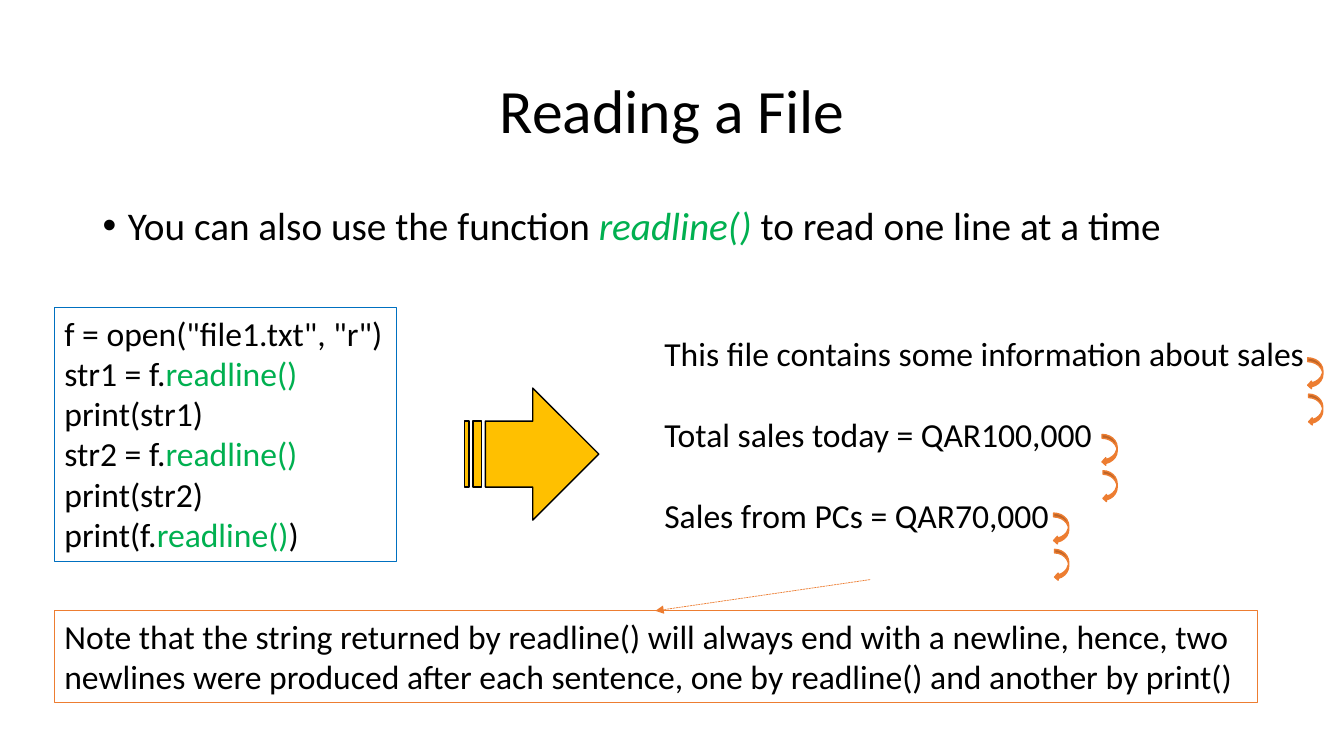
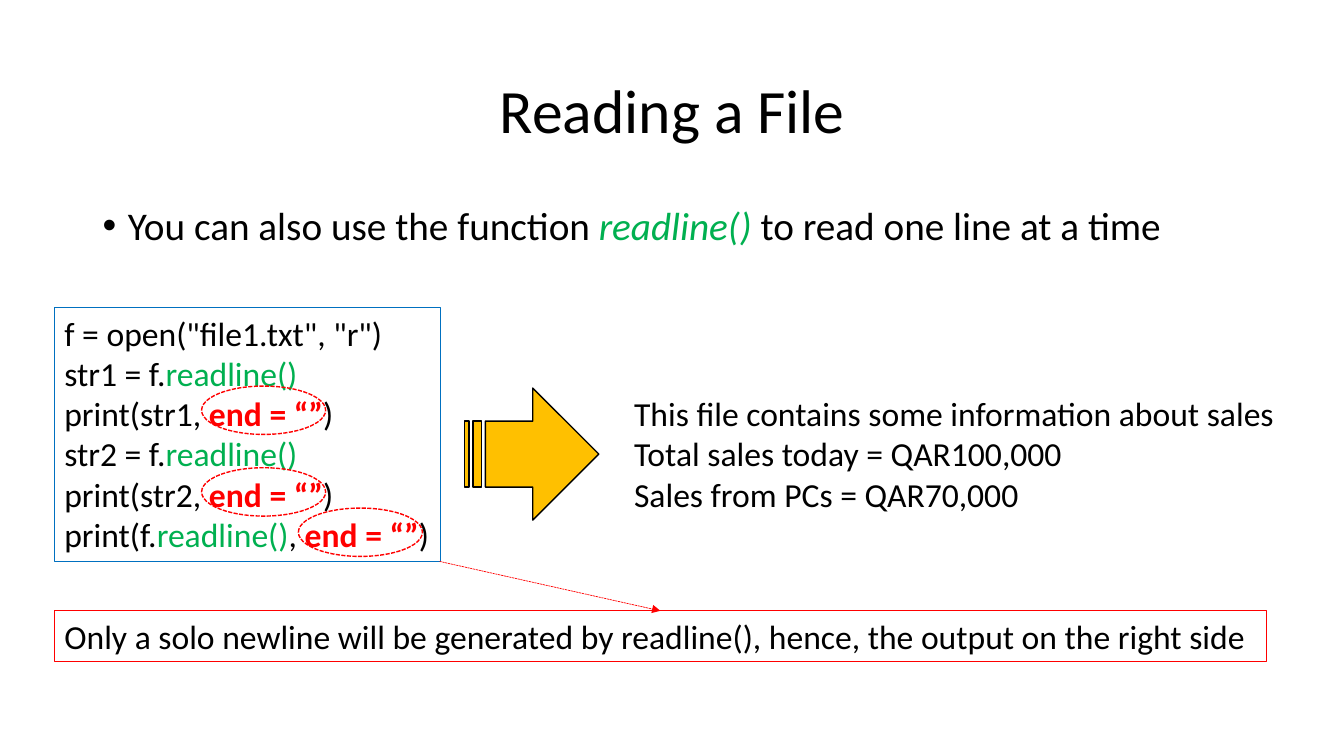
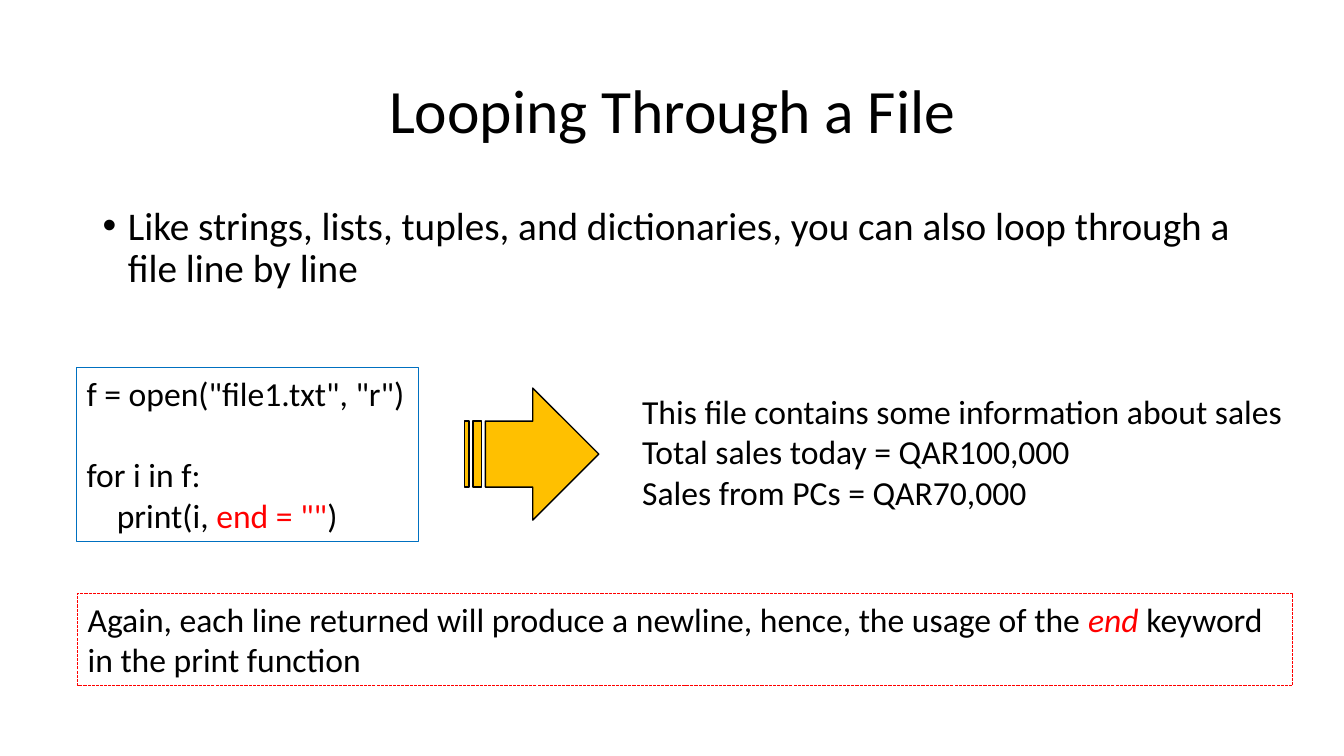
"""Build three slides on reading a file line by line."""
from lxml import etree
from pptx import Presentation
from pptx import util as u
from pptx.dml.color import RGBColor
from pptx.enum import dml, shapes, text
from pptx.oxml import ns

BLACK, GREEN, RED = "000000", "00B050", "FF0000"
BLUE, GOLD, ORANGE = "0070C0", "FFC000", "ED7D31"
DASH = dml.MSO_LINE.SQUARE_DOT
KIND = shapes.MSO_SHAPE
LINE = 29.3


def tint(fill, hue):
    """Make a fill solid in a hex colour."""
    fill.solid()
    fill.fore_color.rgb = RGBColor.from_string(hue)


def write(slide, lines, at, size=24, wrap=True, center=False, space=None,
          bullet=False, gaps=None, dents=None, edge=None, dash=None):
    """Add a text box; each line is a list of strings or (string, colour, style)."""
    box = slide.shapes.add_textbox(*map(u.Inches, at))
    frame = box.text_frame
    frame.word_wrap = wrap
    if edge:
        tint(box.line.fill, edge)
        box.line.width = u.Pt(0.75)
        box.line.dash_style = dash
    if center:
        frame.vertical_anchor = text.MSO_ANCHOR.MIDDLE
    for row, parts in enumerate(lines):
        para = frame.paragraphs[0] if row == 0 else frame.add_paragraph()
        para.alignment = text.PP_ALIGN.CENTER if center else text.PP_ALIGN.LEFT
        para.line_spacing = space
        para.space_before = u.Pt((gaps or {}).get(row, 0))
        props = para._p.get_or_add_pPr()
        if bullet:
            props.set("marL", str(u.Inches(0.25)))
            props.set("indent", str(u.Inches(-0.25)))
            etree.SubElement(props, ns.qn("a:buFont")).set("typeface", "Arial")
            etree.SubElement(props, ns.qn("a:buChar")).set("char", "•")
        elif dents and row in dents:
            props.set("marL", str(u.Inches(dents[row])))
        for part in parts:
            words, hue, style = (part, BLACK, "") if isinstance(part, str) else part
            run = para.add_run()
            run.text = words
            run.font.name = "Calibri"
            run.font.size = u.Pt(size)
            run.font.bold = style == "bold"
            run.font.italic = style == "italic"
            tint(run.font.fill, hue)


call = ("readline()", GREEN, "")
end = ("end = “”", RED, "bold")
start = ['f = open("file1.txt", "r")']
intro = ["You can also use the function ", ("readline() ", GREEN, "italic"),
         "to read one line at a time"]
sales = [["This file contains some information about sales"],
         ["Total sales today = QAR100,000"],
         ["Sales from PCs = QAR70,000"]]

curls = [(KIND.CURVED_LEFT_ARROW, (x + 0.01 * n, y + 0.36 * n, 0.15 - 0.01 * n, 0.31),
          ORANGE, ORANGE, None)
         for x, y in ((10.93, 4.31), (12.97, 3.55), (10.45, 5.09)) for n in (0, 1)]
rings = [(KIND.OVAL, (x, y, 1.23, 0.48), None, RED, DASH)
         for x, y in ((2, 3.83), (2, 4.64), (2.96, 5.04))]
arrow = (KIND.STRIPED_RIGHT_ARROW, (4.61, 3.85, 1.33, 1.31), GOLD, BLACK, None)

pages = [
    dict(title="Reading a File", point=intro,
         code=[start, ["str1 = f.", call], ["print(str1)"], ["str2 = f.", call],
               ["print(str2)"], ["print(f.", call, ")"]],
         place=(0.54, 3.05, 3.39, 2.52), form={},
         out=(6.49, 3.25, 6.61, 2.52), gaps={1: LINE, 2: LINE},
         note=["Note that the string returned by readline() will always end with a "
               "newline, hence, two newlines were produced after each sentence, "
               "one by readline() and another by print()"],
         foot=(0.54, 6.06, 11.93, 0.91), edge=ORANGE, dash=None,
         link=(8.63, 5.75, 6.5, 6.06), marks=curls),
    dict(title="Reading a File", point=intro,
         code=[start, ["str1 = f.", call], ["print(str1, ", end, ")"],
               ["str2 = f.", call], ["print(str2, ", end, ")"],
               ["print(f.", call, ", ", end, ")"]],
         place=(0.54, 3.05, 3.83, 2.52), form={},
         out=(6.19, 3.85, 6.61, 1.31), gaps={},
         note=["Only a solo newline will be generated by readline(), hence, "
               "the output on the right side"],
         foot=(0.54, 6.06, 12.02, 0.5), edge=RED, dash=None,
         link=(4.36, 5.57, 6.55, 6.06), marks=rings),
    dict(title="Looping Through a File",
         point=["Like strings, lists, tuples, and dictionaries, you can also loop "
                "through a file line by line"],
         code=[start, ["for i in f:"], ["print(i, ", ('end = ""', RED, ""), ")"]],
         place=(0.76, 3.65, 3.39, 1.72), form=dict(gaps={1: LINE}, dents={2: 0.3}),
         out=(6.27, 3.83, 6.61, 1.72), gaps={},
         note=["Again, each line returned will produce a newline, hence, the usage "
               "of the ", ("end", RED, "italic"), " keyword in the print function"],
         foot=(0.77, 5.89, 12.05, 0.91), edge=RED, dash=DASH,
         link=None, marks=[]),
]

deck = Presentation()
deck.slide_width, deck.slide_height = u.Inches(13.33), u.Inches(7.5)

for page in pages:
    slide = deck.slides.add_slide(deck.slide_layouts[6])
    write(slide, [[page["title"]]], (0.92, 0.4, 11.5, 1.45), size=44, center=True, space=0.9)
    write(slide, [page["point"]], (0.92, 2, 11.5, 4.76), size=28, space=0.9,
          bullet=True, gaps={0: 10})
    write(slide, page["code"], page["place"], wrap=False, edge=BLUE, **page["form"])
    write(slide, sales, page["out"], wrap=False, gaps=page["gaps"])
    write(slide, [page["note"]], page["foot"], edge=page["edge"], dash=page["dash"])
    if page["link"]:
        link = slide.shapes.add_connector(shapes.MSO_CONNECTOR.STRAIGHT,
                                          *map(u.Inches, page["link"]))
        tint(link.line.fill, page["edge"])
        link.line.width = u.Pt(0.5)
        link.line.dash_style = DASH
        etree.SubElement(link.line._get_or_add_ln(), ns.qn("a:tailEnd")).set("type", "triangle")
        etree.SubElement(link._element.spPr, ns.qn("a:effectLst"))
    for kind, at, fill, edge, dash in [arrow] + page["marks"]:
        mark = slide.shapes.add_shape(kind, *map(u.Inches, at))
        mark.shadow.inherit = False
        if fill:
            tint(mark.fill, fill)
        else:
            mark.fill.background()
        tint(mark.line.fill, edge)
        mark.line.width = u.Pt(1)
        mark.line.dash_style = dash

deck.save("out.pptx")
